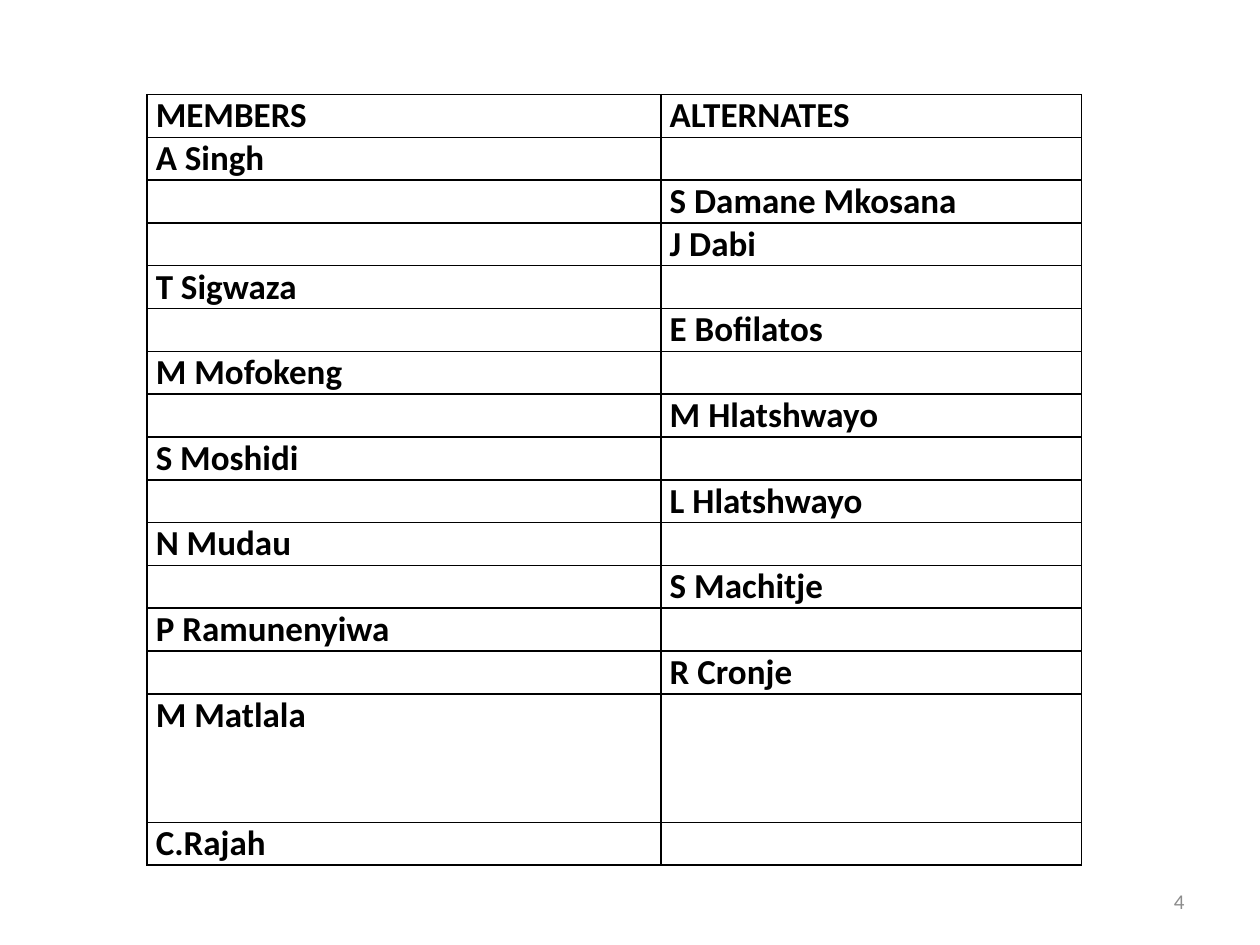
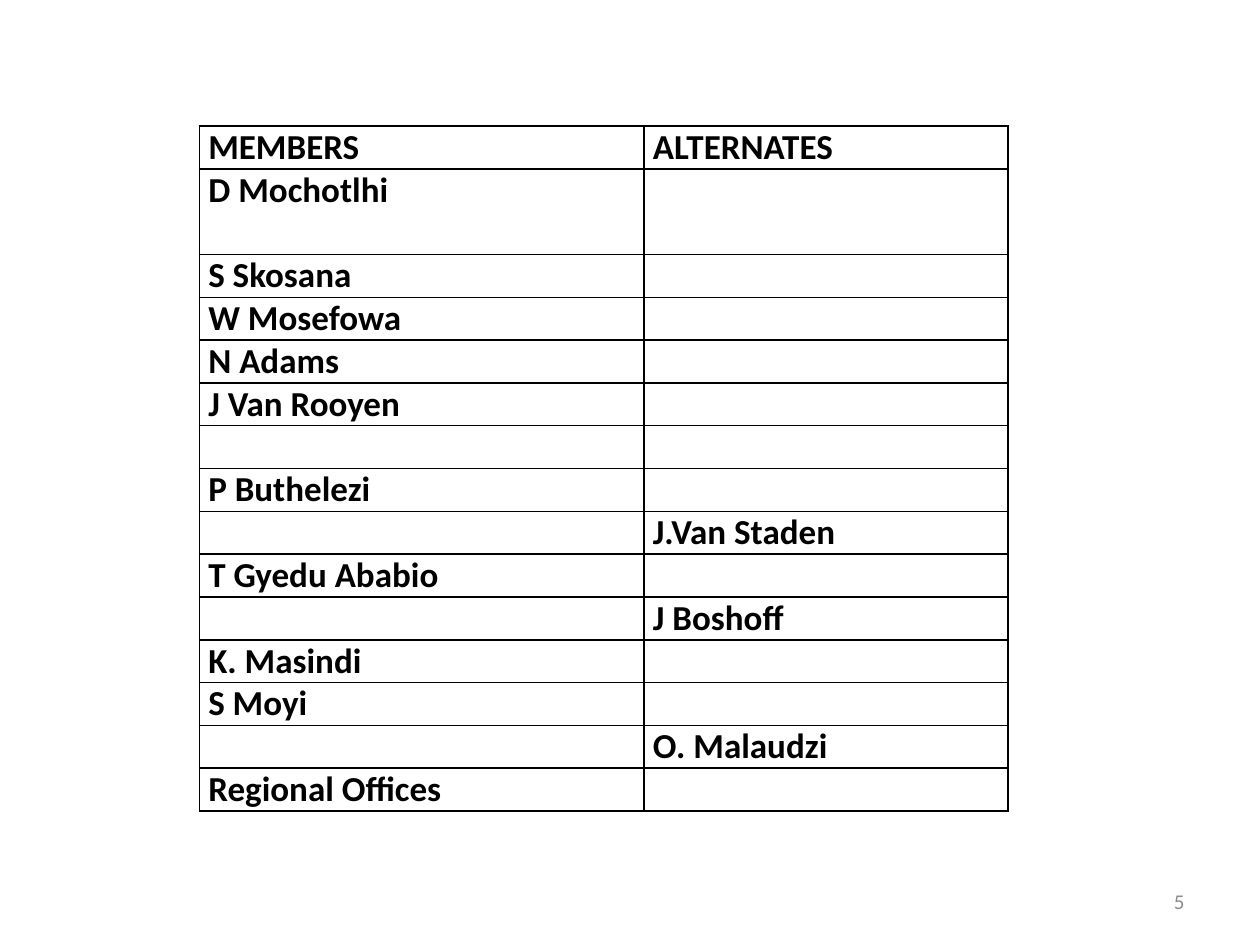
from lxml.etree import SubElement
from pptx import Presentation
from pptx.dml.color import RGBColor
from pptx.enum.text import MSO_ANCHOR as Anchor, PP_ALIGN as Align
from pptx.oxml.ns import qn
from pptx.util import Inches, Pt

FONT = "Calibri"
BLACK, GREY = "000000", "8C8C8C"
GRID = Inches(1) / 12        # twelve grid units to the inch
ROW_HEIGHT = Inches(0.34)    # one line of table text
MEMBER_SHARE = 0.55          # share of the table width for members
HEADINGS = ("MEMBERS", "ALTERNATES")

# Each row: member, alternate, height in lines
FIRST_ROWS = [
    ("A Singh", "", 1),
    ("", "S Damane Mkosana", 1),
    ("", "J Dabi", 1),
    ("T Sigwaza", "", 1),
    ("", "E Bofilatos", 1),
    ("M Mofokeng", "", 1),
    ("", "M Hlatshwayo", 1),
    ("S Moshidi", "", 1),
    ("", "L Hlatshwayo", 1),
    ("N Mudau", "", 1),
    ("", "S Machitje", 1),
    ("P Ramunenyiwa", "", 1),
    ("", "R Cronje", 1),
    ("M Matlala", "", 3),
    ("C.Rajah", "", 1),
]
SECOND_ROWS = [
    ("D Mochotlhi", "", 2),
    ("S Skosana", "", 1),
    ("W Mosefowa", "", 1),
    ("N Adams", "", 1),
    ("J Van Rooyen", "", 1),
    ("", "", 1),
    ("P Buthelezi", "", 1),
    ("", "J.Van Staden", 1),
    ("T Gyedu Ababio", "", 1),
    ("", "J Boshoff", 1),
    ("K. Masindi", "", 1),
    ("S Moyi", "", 1),
    ("", "O. Malaudzi", 1),
    ("Regional Offices", "", 1),
]


def color(hex_string):
    return RGBColor.from_string(hex_string)


def units(count):
    return round(count * GRID)


def add_run(paragraph, text, size, hex_color, bold=False):
    run = paragraph.add_run()
    run.text = text
    font = run.font
    font.name, font.size, font.bold = FONT, Pt(size), bold
    font.color.rgb = color(hex_color)


def add_borders(cell):
    properties = cell._tc.get_or_add_tcPr()
    for position, side in enumerate(("lnL", "lnR", "lnT", "lnB")):
        line = properties.makeelement(qn(f"a:{side}"), {"w": str(Pt(1))})
        fill = SubElement(line, qn("a:solidFill"))
        SubElement(fill, qn("a:srgbClr"), val=BLACK)
        properties.insert(position, line)


def fill_cell(cell, text):
    cell.margin_left = cell.margin_right = Inches(0.07)
    cell.margin_top = cell.margin_bottom = 0
    cell.fill.background()
    add_borders(cell)
    if text:
        paragraph = cell.text_frame.paragraphs[0]
        paragraph.alignment = Align.JUSTIFY
        add_run(paragraph, text, 20, BLACK, bold=True)


def add_member_table(slide, left, top, width, people):
    rows = [(*HEADINGS, 1), *people]
    height = ROW_HEIGHT * sum(lines for *_, lines in rows)
    table = slide.shapes.add_table(
        len(rows), len(HEADINGS), units(left), units(top), units(width), height).table
    table.first_row = table.horz_banding = False
    for column, share in zip(table.columns, (MEMBER_SHARE, 1 - MEMBER_SHARE)):
        column.width = units(width * share)
    for row, (*names, lines) in zip(table.rows, rows):
        row.height = ROW_HEIGHT * lines
        for cell, name in zip(row.cells, names):
            fill_cell(cell, name)


def add_page_number(slide, number):
    box = slide.shapes.add_textbox(units(86), units(83.4), units(28), units(4.8))
    frame = box.text_frame
    frame.word_wrap = True
    frame.vertical_anchor = Anchor.MIDDLE
    paragraph = frame.paragraphs[0]
    paragraph.alignment = Align.RIGHT
    add_run(paragraph, str(number), 12, GREY)


def main():
    presentation = Presentation()
    presentation.slide_width, presentation.slide_height = Inches(10), Inches(7.5)
    blank = presentation.slide_layouts[6]

    # Left, top and width of each table in grid units, then its people
    tables = [(14, 9, 89, FIRST_ROWS), (19, 12, 77, SECOND_ROWS)]
    for number, table in enumerate(tables, start=4):
        slide = presentation.slides.add_slide(blank)
        add_page_number(slide, number)
        add_member_table(slide, *table)

    presentation.save("out.pptx")


if __name__ == "__main__":
    main()
